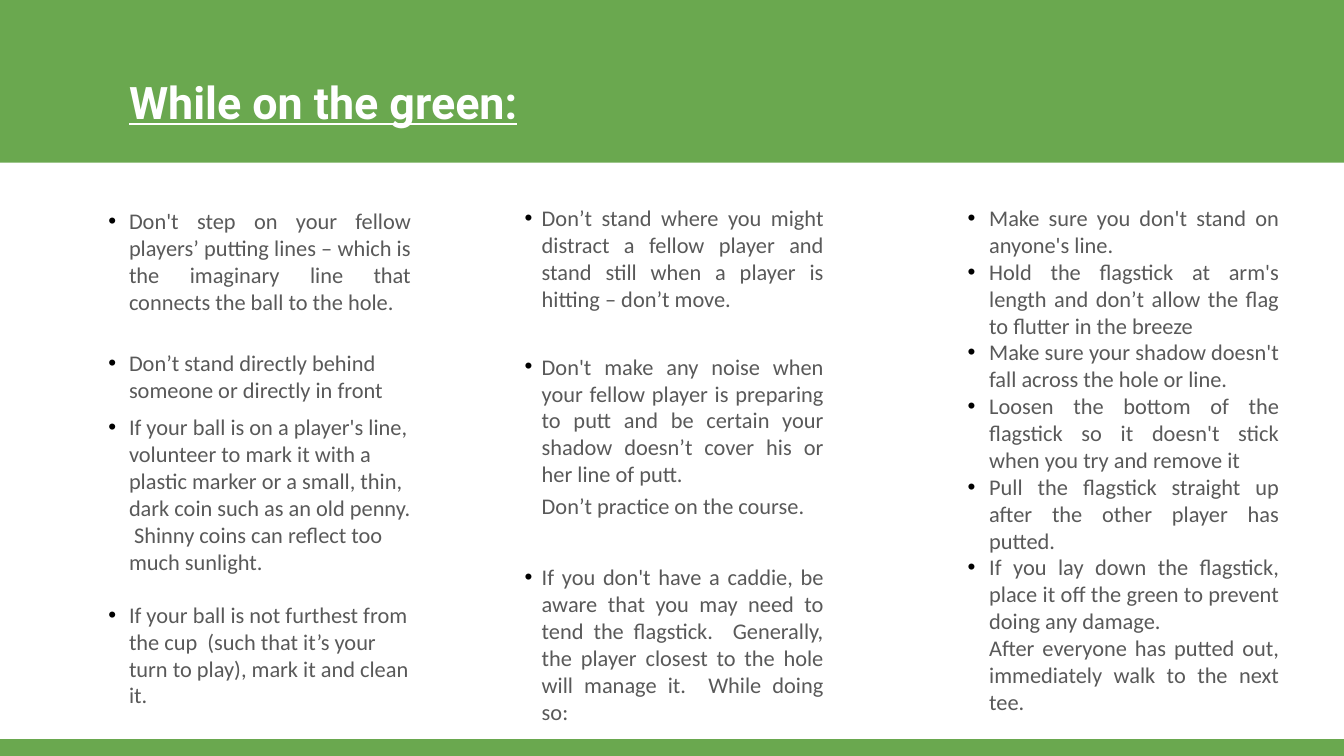
from lxml.etree import SubElement
from pptx import Presentation
from pptx.dml.color import RGBColor
from pptx.enum.shapes import MSO_SHAPE
from pptx.enum.text import MSO_ANCHOR, MSO_AUTO_SIZE, PP_ALIGN as ALIGN
from pptx.oxml.ns import qn
from pptx.util import Pt

SLIDE_WIDTH, SLIDE_HEIGHT = 720, 405
GREEN, WHITE, GREY, BLACK = "6AA84F", "FFFFFF", "595959", "000000"
LEFT, JUSTIFY = ALIGN.LEFT, ALIGN.JUSTIFY

TITLE = "While on the green:"
BANDS = [(0, 87.2), (396, 9)]  # top, height

# Each rule: text, space before, alignment, bulleted
BEFORE_PUTTING = [
    ("Don't step on your fellow players’ putting lines – which is the "
     "imaginary line that connects the ball to the hole.", 0, JUSTIFY, True),
    ("Don’t stand directly behind someone or directly in front",
     18.8, LEFT, True),
    ("If your ball is on a player's line, volunteer to mark it with a plastic "
     "marker or a small, thin, dark coin such as an old penny.  Shinny coins "
     "can reflect too much sunlight.", 5.4, LEFT, True),
    ("If your ball is not furthest from the cup  (such that it’s your turn to "
     "play), mark it and clean it.", 14, LEFT, True),
]
COURTESY = [
    ("Don’t stand where you might distract a fellow player and stand still "
     "when a player is hitting – don’t move.", 0, JUSTIFY, True),
    ("Don't make any noise when your fellow player is preparing to putt and be "
     "certain your shadow doesn’t cover his or her line of putt.",
     22, JUSTIFY, True),
    ("Don’t practice on the course.", 2.8, JUSTIFY, False),
    ("If you don't have a caddie, be aware that you may need to tend the "
     "flagstick.  Generally, the player closest to the hole will manage it.  "
     "While doing so:", 23.7, JUSTIFY, True),
]
FLAGSTICK = [
    ("Make sure you don't stand on anyone's line.", 0, JUSTIFY, True),
    ("Hold the flagstick at arm's length and don’t allow the flag to flutter "
     "in the breeze", 0, JUSTIFY, True),
    ("Make sure your shadow doesn't fall across the hole or line.",
     0, JUSTIFY, True),
    ("Loosen the bottom of the flagstick so it doesn't stick when you try and "
     "remove it", 0, JUSTIFY, True),
    ("Pull the flagstick straight up after the other player has putted.",
     0, JUSTIFY, True),
    ("If you lay down the flagstick, place it off the green to prevent doing "
     "any damage.", 0, JUSTIFY, True),
    ("After everyone has putted out, immediately walk to the next tee.",
     0, JUSTIFY, False),
]
# Each column: bullet x, text x, right edge, top, rules
COLUMNS = [
    (58, 69.1, 220.3, 107.3, BEFORE_PUTTING),
    (281, 290.2, 441.4, 105.8, COURTESY),
    (518.4, 529.9, 685.4, 105.8, FLAGSTICK),
]
COLUMN_BOTTOM = 392

TITLE_FONT = {"name": "Roboto", "size": Pt(24), "bold": True, "underline": True}
RULE_FONT = {"name": "Calibri", "size": Pt(12), "bold": False}


def color(hex_code):
    return RGBColor.from_string(hex_code)


def apply(target, values):
    for key, value in values.items():
        setattr(target, key, value)


def place(shape, left, top, width, height):
    apply(shape, {"left": Pt(left), "top": Pt(top),
                  "width": Pt(width), "height": Pt(height)})


def set_frame(frame, inset):
    apply(frame, {"margin_left": 0, "margin_right": 0,
                  "margin_top": Pt(inset), "margin_bottom": Pt(inset),
                  "vertical_anchor": MSO_ANCHOR.TOP, "word_wrap": True,
                  "auto_size": MSO_AUTO_SIZE.NONE})


def set_bullet(paragraph, hanging, bulleted):
    """Hang the text by a fixed indent, with a black bullet or none."""
    properties = paragraph._p.get_or_add_pPr()
    properties.set("marL", str(Pt(hanging)))
    properties.set("indent", str(-Pt(hanging) if bulleted else 0))
    if not bulleted:
        SubElement(properties, qn("a:buNone"))
        return
    fill = SubElement(properties, qn("a:buClr"))
    SubElement(fill, qn("a:srgbClr"), val=BLACK)
    SubElement(properties, qn("a:buFont"), typeface="Arial")
    SubElement(properties, qn("a:buChar"), char="•")


def write(paragraph, text, font_values, hex_code, **layout):
    apply(paragraph, {"space_before": Pt(0), "space_after": Pt(0),
                      "line_spacing": 1.0, **layout})
    run = paragraph.add_run()
    run.text = text
    apply(run.font, font_values)
    run.font.color.rgb = color(hex_code)


def add_band(slide, top, height):
    band = slide.shapes.add_shape(MSO_SHAPE.RECTANGLE, 0, Pt(top),
                                  Pt(SLIDE_WIDTH), Pt(height))
    band.shadow.inherit = False
    band.fill.solid()
    band.fill.fore_color.rgb = color(GREEN)
    band.line.fill.background()
    slide.shapes._spTree.insert(2, band._element)  # behind the text


def fill_column(body, bullet_x, text_x, right, top, rules):
    place(body, bullet_x, top, right - bullet_x, COLUMN_BOTTOM - top)
    frame = body.text_frame
    set_frame(frame, 3.6)
    for index, (text, gap, alignment, bulleted) in enumerate(rules):
        paragraph = frame.add_paragraph() if index else frame.paragraphs[0]
        set_bullet(paragraph, text_x - bullet_x, bulleted)
        write(paragraph, text, RULE_FONT, GREY,
              space_before=Pt(gap), alignment=alignment)


def main():
    deck = Presentation()
    apply(deck, {"slide_width": Pt(SLIDE_WIDTH), "slide_height": Pt(SLIDE_HEIGHT)})
    slide = deck.slides.add_slide(deck.slide_layouts[4])  # title and four bodies
    title, *bodies = slide.placeholders

    for band in BANDS:
        add_band(slide, *band)

    place(title, 69.1, 40, 570, 29)
    set_frame(title.text_frame, 0)
    write(title.text_frame.paragraphs[0], TITLE, TITLE_FONT, WHITE, alignment=LEFT)

    for body, column in zip(bodies, COLUMNS):
        fill_column(body, *column)
    for unused in bodies[len(COLUMNS):]:
        unused._element.getparent().remove(unused._element)

    deck.save("out.pptx")


if __name__ == "__main__":
    main()
